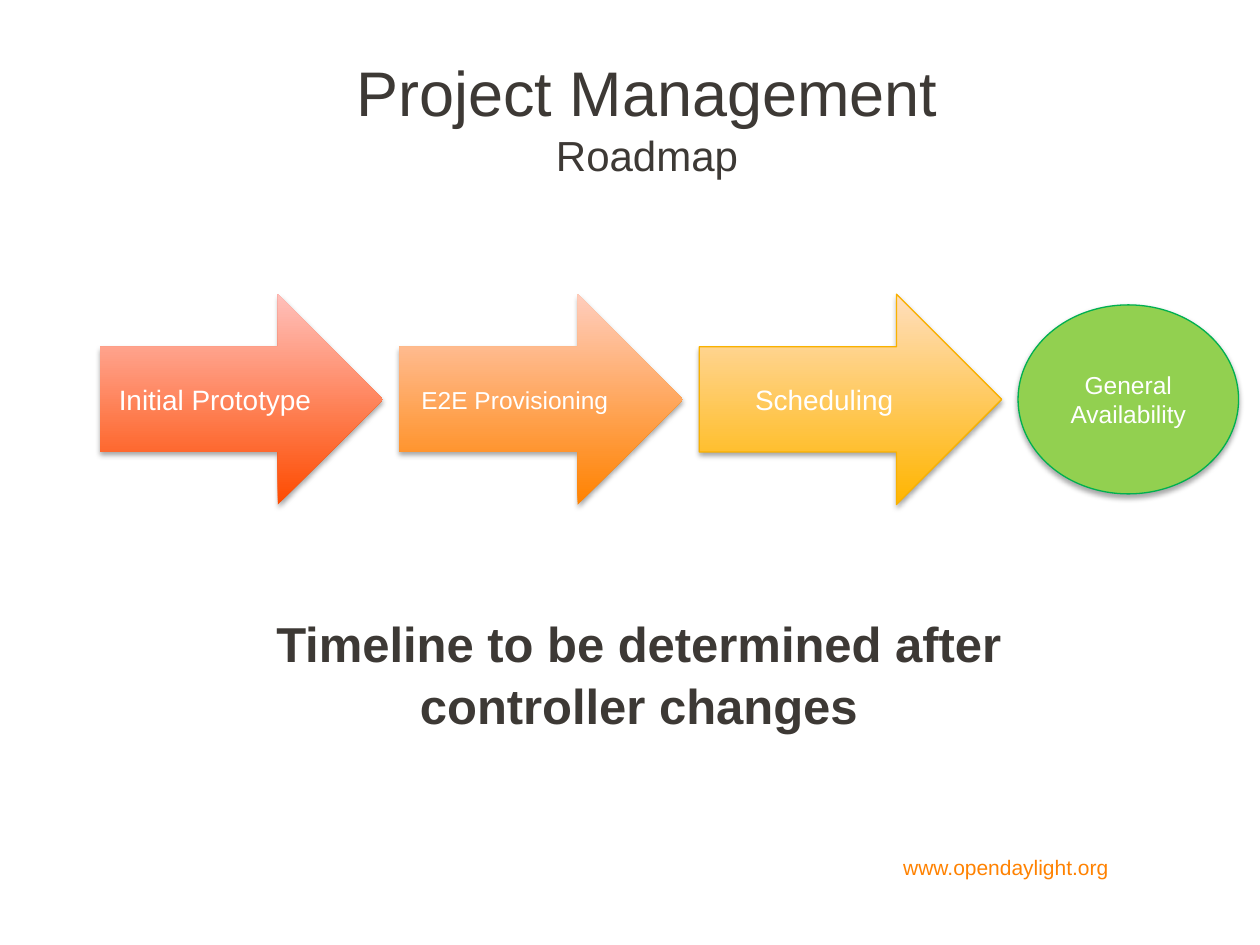
from lxml import etree
from pptx import Presentation, util as u
from pptx.dml.color import RGBColor
from pptx.enum import shapes, text
from pptx.oxml import ns

INK, WHITE, ORANGE = "3D3935", "FFFFFF", "FF8200"
HEADING = [("Project Management", 36), ("Roadmap", 24)]
STAGES = [
    ("Initial Prototype", 16, 2.25, ("FE4B00", "FFC0BB"), None),
    ("E2E Provisioning", 14, 2.25, (ORANGE, "FFCDBD"), None),
    ("Scheduling", 16, 2.4, ("FFB500", "FFDEBD"), "F9B100"),
]
GOAL = ("General Availability", 14, 1.75, ("92D050",), "00B050")
TIMELINE = "Timeline to be determined after controller changes"
WEBSITE = "www.opendaylight.org"
LEFT, MIDDLE, GAP = 0.79, 3.17, 0.13
ARROW_HEIGHT, GOAL_HEIGHT = 1.67, 1.5


def rgb(color):
    return RGBColor.from_string(color)


def style(font, size, color, bold=False):
    font.name, font.size, font.bold = "Arial", u.Pt(size), bold
    font.color.rgb = rgb(color)


def add_shadow(shape):
    shape.shadow.inherit = False
    effects = shape._element.spPr.find(ns.qn("a:effectLst"))
    shadow = etree.SubElement(effects, ns.qn("a:outerShdw"), blurRad="40000",
                              dist="23000", dir="5400000", rotWithShape="0")
    black = etree.SubElement(shadow, ns.qn("a:srgbClr"), val="000000")
    etree.SubElement(black, ns.qn("a:alpha"), val="35000")


def add_stage(slide, kind, left, height, stage):
    label, size, width, colors, outline = stage
    shape = slide.shapes.add_shape(
        kind, u.Inches(left), u.Inches(MIDDLE - height / 2), u.Inches(width), u.Inches(height))
    if len(colors) > 1:
        shape.fill.gradient()
        shape.fill.gradient_angle = 90
        for stop, color in zip(shape.fill.gradient_stops, colors):
            stop.color.rgb = rgb(color)
    else:
        shape.fill.solid()
        shape.fill.fore_color.rgb = rgb(colors[0])
    if outline:
        shape.line.color.rgb = rgb(outline)
        shape.line.width = u.Pt(0.75)
    else:
        shape.line.fill.background()
    add_shadow(shape)
    frame = shape.text_frame
    frame.text = label
    frame.vertical_anchor = text.MSO_ANCHOR.MIDDLE
    frame.paragraphs[0].alignment = text.PP_ALIGN.CENTER
    style(frame.paragraphs[0].font, size, WHITE)


def add_text(slide, box, words, size, color, align, bold=False):
    frame = slide.shapes.add_textbox(*map(u.Inches, box)).text_frame
    frame.word_wrap = True
    frame.text = words
    paragraph = frame.paragraphs[0]
    paragraph.alignment = align
    style(paragraph.font, size, color, bold)
    return paragraph


def add_heading(slide):
    title = slide.shapes.title
    title.left, title.top, title.width, title.height = map(u.Inches, (0.77, 0.3, 8.73, 1.25))
    frame = title.text_frame
    frame.auto_size = text.MSO_AUTO_SIZE.NONE
    frame.vertical_anchor = text.MSO_ANCHOR.MIDDLE
    paragraph = frame.paragraphs[0]
    paragraph.alignment = text.PP_ALIGN.CENTER
    for index, (words, size) in enumerate(HEADING):
        if index:
            paragraph.add_line_break()
        run = paragraph.add_run()
        run.text = words
        style(run.font, size, INK)


def main():
    """Build the project roadmap slide."""
    deck = Presentation()
    deck.slide_width, deck.slide_height = u.Inches(10), u.Inches(7.5)
    slide = deck.slides.add_slide(deck.slide_layouts[5])
    add_heading(slide)
    left = LEFT
    for stage in STAGES:
        add_stage(slide, shapes.MSO_SHAPE.RIGHT_ARROW, left, ARROW_HEIGHT, stage)
        left += stage[2] + GAP
    add_stage(slide, shapes.MSO_SHAPE.OVAL, left, GOAL_HEIGHT, GOAL)
    timeline = add_text(slide, (1.42, 4.8, 7.3, 1.04), TIMELINE, 28, INK,
                        text.PP_ALIGN.CENTER, True)
    timeline.line_spacing = 1.05
    add_text(slide, (7.07, 6.73, 1.86, 0.33), WEBSITE, 12, ORANGE, text.PP_ALIGN.LEFT)
    deck.save("out.pptx")


if __name__ == "__main__":
    main()
